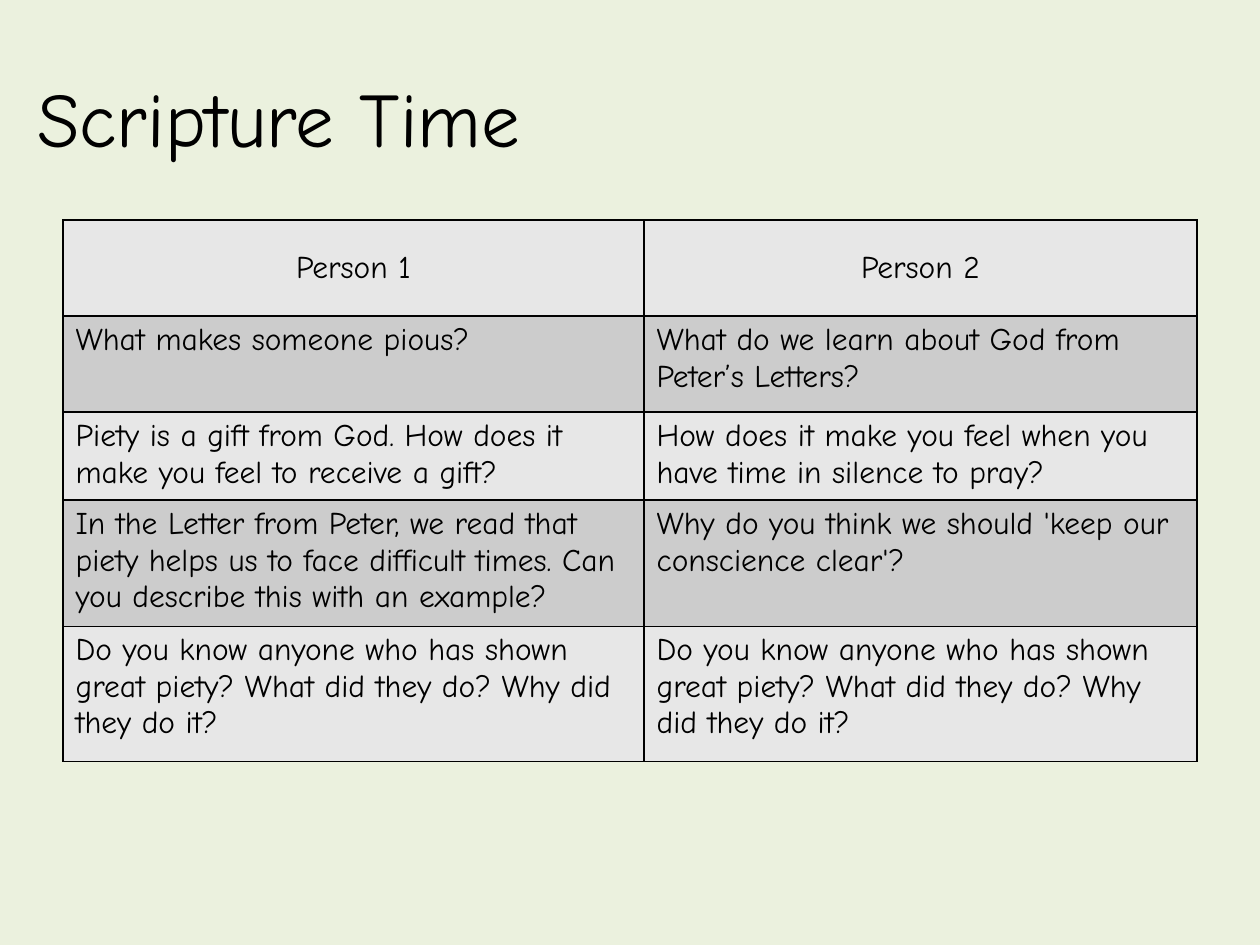
from lxml.etree import SubElement
from pptx import Presentation
from pptx.dml.color import RGBColor
from pptx.enum.text import MSO_ANCHOR, PP_ALIGN
from pptx.oxml.ns import qn
from pptx.util import Pt

# Content
TITLE = "Scripture Time"
ROWS = [
    ("Person 1", "Person 2"),
    ("What makes someone pious?",
     "What do we learn about God from Peter’s Letters?"),
    ("Piety is a gift from God. How does it make you feel to receive a gift?",
     "How does it make you feel when you have time in silence to pray?"),
    ("In the Letter from Peter, we read that piety helps us to face difficult times. "
     "Can you describe this with an example?",
     "Why do you think we should 'keep our conscience clear'?"),
    ("Do you know anyone who has shown great piety? What did they do? Why did they do it?",
     "Do you know anyone who has shown great piety? What did they do? Why did they do it?"),
]

# Layout in px, 126 to the inch
SCALE = 914400 / 126
WIDTHS = [581, 553]
HEIGHTS = [96, 96, 83, 96, 135]
FONT = "Comic Neue"
COLORS = {"back": "EBF1DE", "ink": "000000", "light": "E7E7E7", "dark": "CCCCCC"}


def px(n):
    return round(n * SCALE)


def color(name):
    return RGBColor.from_string(COLORS[name])


def write(frame, text, size=18, align=PP_ALIGN.LEFT):
    frame.word_wrap = True
    para = frame.paragraphs[0]
    para.alignment = align
    run = para.add_run()
    run.text = text
    run.font.name = FONT
    run.font.size = Pt(size)
    run.font.color.rgb = color("ink")


def border(cell):
    props = cell._tc.get_or_add_tcPr()
    for i, side in enumerate(("lnL", "lnR", "lnT", "lnB")):
        line = props.makeelement(qn("a:" + side), {"w": str(Pt(1))})
        fill = SubElement(line, qn("a:solidFill"))
        SubElement(fill, qn("a:srgbClr"), val=COLORS["ink"])
        props.insert(i, line)


deck = Presentation()
deck.slide_width, deck.slide_height = px(1260), px(945)
slide = deck.slides.add_slide(deck.slide_layouts[6])
slide.background.fill.solid()
slide.background.fill.fore_color.rgb = color("back")

# Title
title = slide.shapes.add_textbox(px(25), px(38), px(1172), px(158))
title.text_frame.vertical_anchor = MSO_ANCHOR.MIDDLE
write(title.text_frame, TITLE, size=44)

# Question table
table = slide.shapes.add_table(len(ROWS), len(WIDTHS), px(63), px(220),
                               px(sum(WIDTHS)), px(sum(HEIGHTS))).table
for col, width in zip(table.columns, WIDTHS):
    col.width = px(width)
for r, (texts, height) in enumerate(zip(ROWS, HEIGHTS)):
    table.rows[r].height = px(height)
    for c, text in enumerate(texts):
        cell = table.cell(r, c)
        cell.fill.solid()
        cell.fill.fore_color.rgb = color("dark" if r % 2 else "light")
        cell.vertical_anchor = MSO_ANCHOR.TOP if r else MSO_ANCHOR.MIDDLE
        write(cell.text_frame, text, align=PP_ALIGN.LEFT if r else PP_ALIGN.CENTER)
        border(cell)

deck.save("out.pptx")
